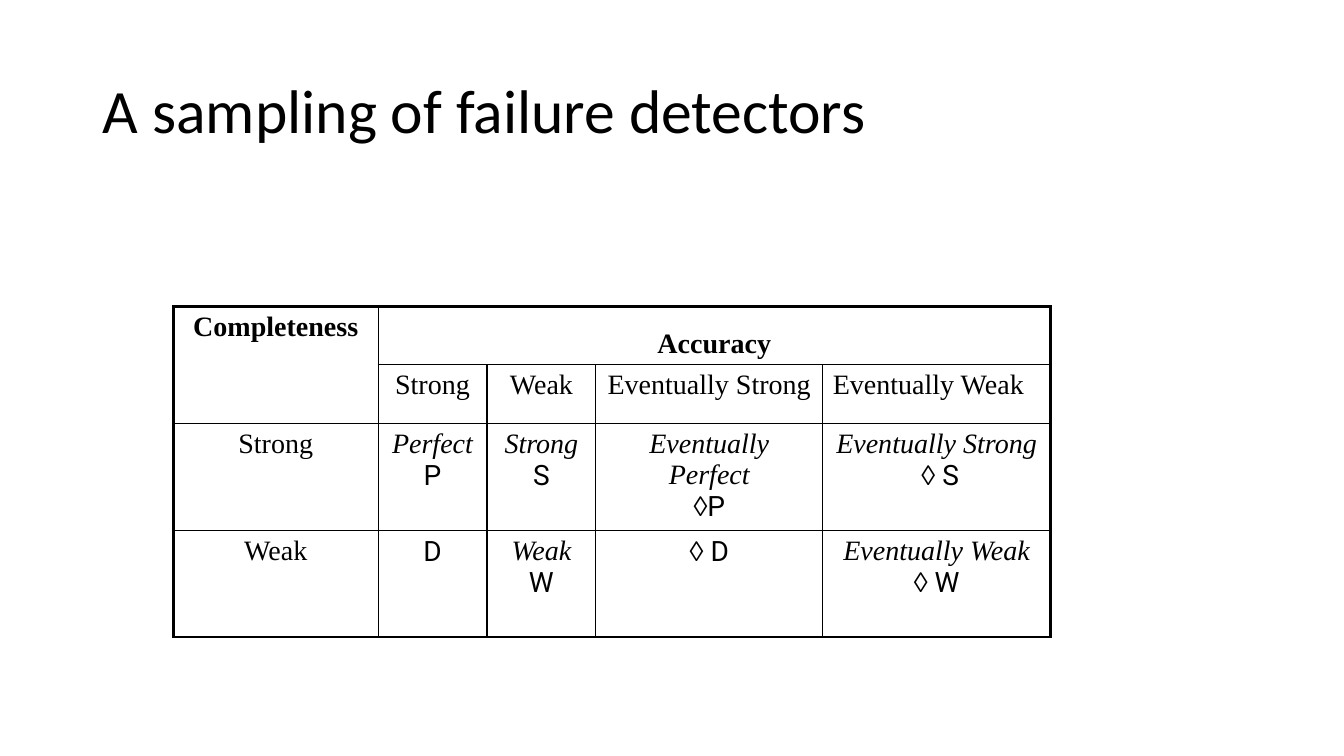
from lxml import etree
from pptx import Presentation
from pptx.dml.color import RGBColor
from pptx.enum.text import MSO_ANCHOR as Anchor, PP_ALIGN as Align
from pptx.oxml.ns import qn
from pptx.util import Inches, Pt

BLACK = RGBColor(0, 0, 0)
SERIF, SANS, TITLE_FONT = "Times New Roman", "Roboto", "Calibri"
OUTER, INNER = Pt(2.25), Pt(1)
COLUMN_WIDTHS = [2.03, 1.08, 1.08, 2.25, 2.26]
ROW_HEIGHTS = [0.58, 0.58, 1.06, 1.06]
ACCURACY_LEVELS = ["Strong", "Weak", "Eventually Strong", "Eventually Weak"]
# Completeness level -> (name, modal sign, class letter) for each accuracy level
DETECTORS = {
    "Strong": [("Perfect", "", "P"), ("Strong", "", "S"),
               ("Eventually Perfect", "◊", "P"), ("Eventually Strong", " ◊ ", "S")],
    "Weak": [("", "", "D"), ("Weak", "", "W"),
             ("", "◊ ", "D"), ("Eventually Weak", "◊ ", "W")],
}


def add_run(paragraph, text, font=SERIF, size=20, bold=False, italic=False):
    run = paragraph.add_run()
    run.text = text
    run.font.name, run.font.size = font, Pt(size)
    run.font.bold, run.font.italic = bold, italic
    run.font.color.rgb = BLACK


def add_title(slide, text, left, top, width, height):
    title = slide.shapes.title
    title.left, title.top = Inches(left), Inches(top)
    title.width, title.height = Inches(width), Inches(height)
    title.text_frame.vertical_anchor = Anchor.MIDDLE
    heading = title.text_frame.paragraphs[0]
    heading.alignment, heading.line_spacing = Align.LEFT, 0.9
    add_run(heading, text, TITLE_FONT, 44)


def write_label(cell, text, bold=False, align=Align.CENTER):
    label = cell.text_frame.paragraphs[0]
    label.alignment = align
    add_run(label, text, bold=bold)


def write_detector(cell, name, modal, letter):
    """Write the italic name, then the sign and class letter on the next line."""
    detector = cell.text_frame.paragraphs[0]
    detector.alignment = Align.CENTER
    if name:
        add_run(detector, name, italic=True)
        detector.add_line_break()
    if modal:
        add_run(detector, modal)
    add_run(detector, letter, SANS)


def draw_borders(cell, widths):
    """Put black lines (left, right, top, bottom) ahead of the cell fill."""
    properties = cell._tc.get_or_add_tcPr()
    for index, (side, width) in enumerate(zip("LRTB", widths)):
        line = etree.Element(qn(f"a:ln{side}"), w=str(width))
        fill = etree.SubElement(line, qn("a:solidFill"))
        etree.SubElement(fill, qn("a:srgbClr"), val=str(BLACK))
        properties.insert(index, line)


def rule_grid(table):
    """Clear all fills and draw a heavy frame with thin inner lines."""
    rows, columns = len(ROW_HEIGHTS), len(COLUMN_WIDTHS)
    for row in range(rows):
        for column in range(columns):
            cell = table.cell(row, column)
            wide = cell.span_width if cell.is_merge_origin else 1
            high = cell.span_height if cell.is_merge_origin else 1
            on_frame = (column == 0, column + wide == columns,
                        row == 0, row + high == rows)
            cell.fill.background()
            draw_borders(cell, [OUTER if edge else INNER for edge in on_frame])


def add_detector_table(slide, left, top):
    table = slide.shapes.add_table(
        len(ROW_HEIGHTS), len(COLUMN_WIDTHS), Inches(left), Inches(top),
        Inches(sum(COLUMN_WIDTHS)), Inches(sum(ROW_HEIGHTS))).table
    table.first_row = table.horz_banding = False
    for column, width in zip(table.columns, COLUMN_WIDTHS):
        column.width = Inches(width)
    for row, height in zip(table.rows, ROW_HEIGHTS):
        row.height = Inches(height)

    completeness, accuracy = table.cell(0, 0), table.cell(0, 1)
    completeness.merge(table.cell(1, 0))
    accuracy.merge(table.cell(0, 4))
    write_label(completeness, "Completeness", bold=True)
    write_label(accuracy, "Accuracy", bold=True)
    accuracy.vertical_anchor = Anchor.BOTTOM
    for column, level in enumerate(ACCURACY_LEVELS, 1):
        align = Align.LEFT if level == "Eventually Weak" else Align.CENTER
        write_label(table.cell(1, column), level, align=align)
    for row, (level, detectors) in enumerate(DETECTORS.items(), 2):
        write_label(table.cell(row, 0), level)
        for column, detector in enumerate(detectors, 1):
            write_detector(table.cell(row, column), *detector)
    rule_grid(table)


def main():
    deck = Presentation()
    deck.slide_width, deck.slide_height = Inches(13.33), Inches(7.5)
    slide = deck.slides.add_slide(deck.slide_layouts[5])
    add_title(slide, "A sampling of failure detectors", 0.92, 0.4, 11.5, 1.45)
    add_detector_table(slide, 1.72, 3.04)
    deck.save("out.pptx")


if __name__ == "__main__":
    main()
